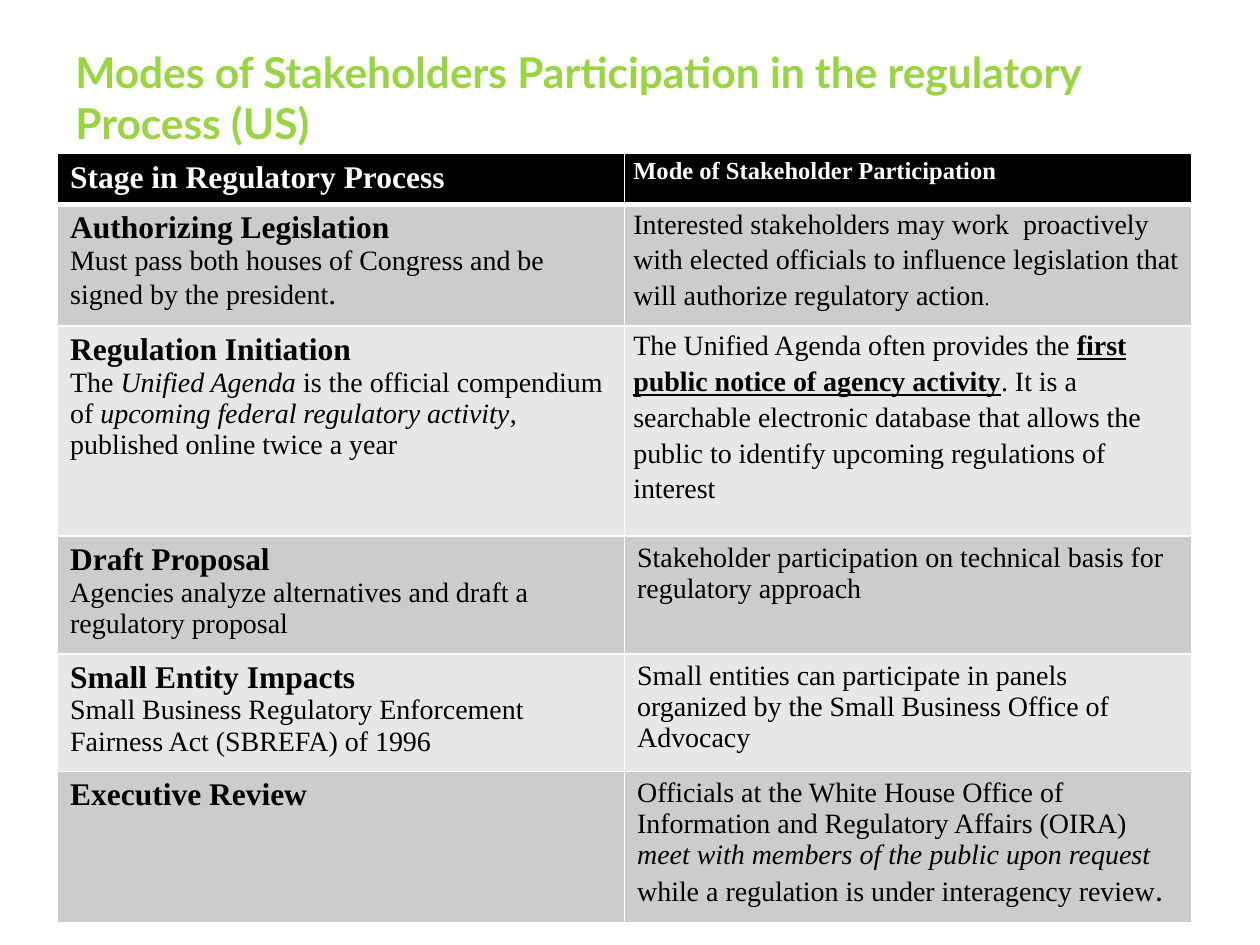
from dataclasses import dataclass, field

from lxml.etree import SubElement
from pptx import Presentation
from pptx.dml.color import RGBColor
from pptx.oxml.ns import qn
from pptx.util import Pt

GREEN = RGBColor(0x9B, 0xD4, 0x42)
BLACK = RGBColor(0x00, 0x00, 0x00)
WHITE = RGBColor(0xFF, 0xFF, 0xFF)
DARK_BAND = RGBColor(0xCC, 0xCC, 0xCC)
LIGHT_BAND = RGBColor(0xE7, 0xE7, 0xE7)
SERIF = "Times New Roman"

HEADING = {"size": Pt(18), "bold": True}
ITALIC = {"italic": True}
KEY_PHRASE = {"bold": True, "underline": True}
LOOSE_MARGINS = {"margin_left": Pt(5), "margin_right": Pt(5),
                 "margin_top": Pt(0), "margin_bottom": Pt(0)}
LOOSE_PARAGRAPH = {"line_spacing": 1.15, "space_after": Pt(10)}


@dataclass
class Span:
    text: str
    style: dict = field(default_factory=dict)


@dataclass
class Stage:
    height: float
    process: list[list[Span]]
    participation: list[Span]
    loose: bool = False


STAGES = [
    Stage(29, [[Span("Stage in Regulatory Process", HEADING)]],
          [Span("Mode of Stakeholder Participation", {"size": Pt(14), "bold": True})],
          loose=True),
    Stage(65, [[Span("Authorizing Legislation", HEADING)],
               [Span("Must pass both houses of Congress and be signed by the president"),
                Span(".", {"size": Pt(18)})]],
          [Span("Interested stakeholders may work  proactively with elected officials "
                "to influence legislation that will authorize regulatory action"),
           Span(".", {"size": Pt(11)})],
          loose=True),
    Stage(120, [[Span("Regulation Initiation", HEADING)],
                [Span("The "), Span("Unified Agenda ", ITALIC),
                 Span("is the official compendium of "),
                 Span("upcoming federal regulatory activity", ITALIC),
                 Span(", published online twice a year")]],
          [Span("The Unified Agenda often provides the "),
           Span("first public notice of agency activity", KEY_PHRASE),
           Span(". It is a searchable electronic database that allows the public "
                "to identify upcoming regulations of interest")],
          loose=True),
    Stage(63, [[Span("Draft Proposal", HEADING)],
               [Span("Agencies analyze alternatives and draft a regulatory proposal")]],
          [Span("Stakeholder participation on technical basis for regulatory approach")]),
    Stage(62, [[Span("Small Entity Impacts", HEADING)],
               [Span("Small Business Regulatory Enforcement Fairness Act (SBREFA) of 1996")]],
          [Span("Small entities can participate in panels organized by the "
                "Small Business Office of Advocacy")]),
    Stage(82, [[Span("Executive Review", HEADING)]],
          [Span("Officials at the White House Office of Information and "
                "Regulatory Affairs (OIRA) "),
           Span("meet with members of the public upon request", ITALIC),
           Span(" while a regulation is under interagency review"),
           Span(".", {"size": Pt(18), "name": "Calibri"})]),
]


def apply(target, values: dict) -> None:
    for name, value in values.items():
        setattr(target, name, value)


def write(frame, paragraphs: list[list[Span]], base: dict, color: RGBColor,
          layout: dict) -> None:
    for index, spans in enumerate(paragraphs):
        paragraph = frame.add_paragraph() if index else frame.paragraphs[0]
        apply(paragraph, layout)
        for span in spans:
            run = paragraph.add_run()
            run.text = span.text
            apply(run.font, base | span.style)
            run.font.color.rgb = color


def add_borders(cell, widths: dict[str, float]) -> None:
    """Draw white cell edges; call before the cell gets its fill."""
    properties = cell._tc.get_or_add_tcPr()
    for edge, width in widths.items():
        line = SubElement(properties, qn(f"a:{edge}"), w=str(Pt(width)))
        solid = SubElement(line, qn("a:solidFill"))
        SubElement(solid, qn("a:srgbClr"), val=str(WHITE))


def add_title(slide) -> None:
    title = slide.shapes.add_textbox(Pt(36), Pt(21.6), Pt(669), Pt(54.7))
    frame = title.text_frame
    frame.word_wrap = True
    apply(frame, {"margin_top": Pt(4.5)})
    write(frame, [[Span("Modes of Stakeholders Participation in the regulatory Process (US)")]],
          {"size": Pt(24.3), "name": "Lato", "bold": True}, GREEN, {})


def add_stage_table(slide) -> None:
    height = sum(stage.height for stage in STAGES)
    table = slide.shapes.add_table(len(STAGES), 2, Pt(32.9), Pt(87.8),
                                   Pt(648), Pt(height)).table
    apply(table, {"first_row": True, "horz_banding": False})
    base = {"size": Pt(16), "name": SERIF, "bold": False}
    for index, stage in enumerate(STAGES):
        table.rows[index].height = Pt(stage.height)
        is_header = index == 0
        band = BLACK if is_header else DARK_BAND if index % 2 else LIGHT_BAND
        edges = {"lnL": 1, "lnR": 1, "lnT": 3 if index == 1 else 1,
                 "lnB": 3 if is_header else 1}
        for column, paragraphs in enumerate([stage.process, [stage.participation]]):
            cell = table.cell(index, column)
            add_borders(cell, edges)
            cell.fill.solid()
            cell.fill.fore_color.rgb = band
            loose = stage.loose and column == 1
            apply(cell, LOOSE_MARGINS if loose else {})
            write(cell.text_frame, paragraphs, base, WHITE if is_header else BLACK,
                  LOOSE_PARAGRAPH if loose else {})


def main() -> None:
    deck = Presentation()
    apply(deck, {"slide_width": Pt(720), "slide_height": Pt(540)})
    slide = deck.slides.add_slide(deck.slide_layouts[6])
    add_title(slide)
    add_stage_table(slide)
    deck.save("out.pptx")


if __name__ == "__main__":
    main()
